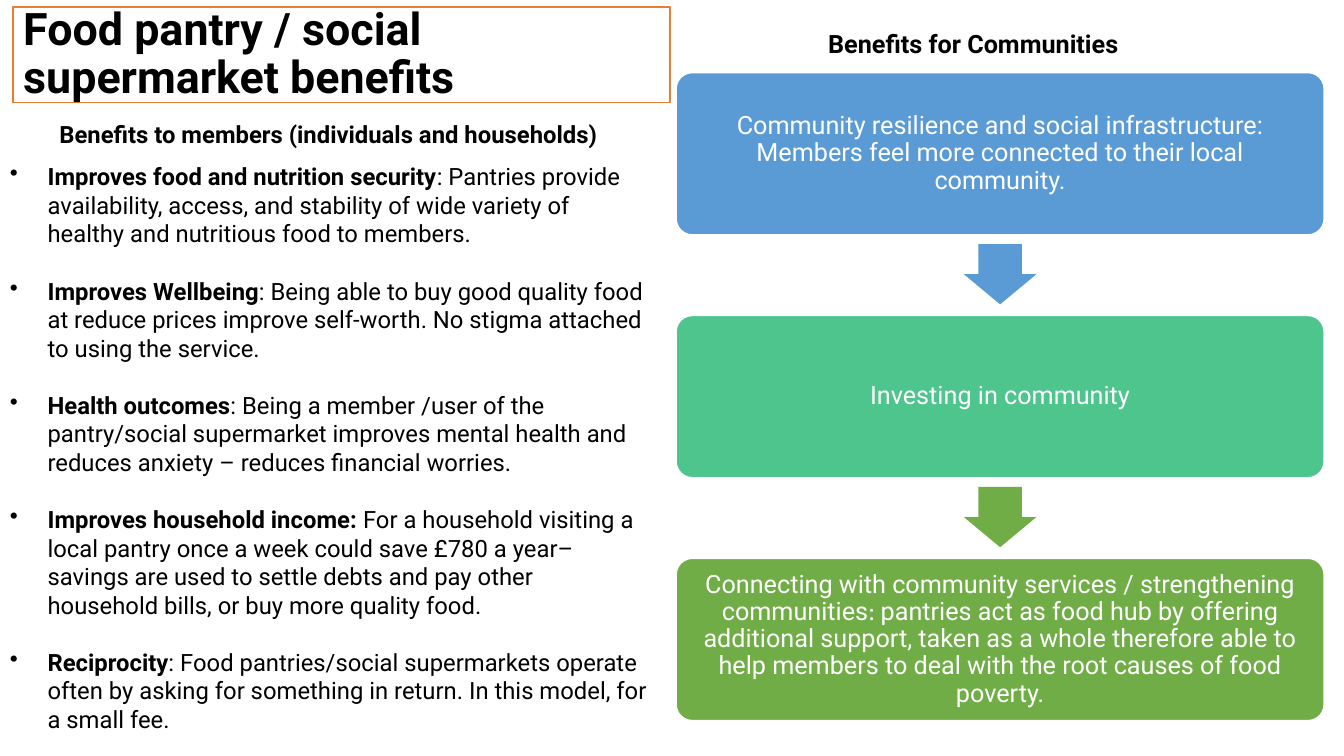
"""Build the slide on the benefits of food pantries and social supermarkets."""
from lxml import etree
from pptx import Presentation
from pptx.dml.color import RGBColor
from pptx.enum import shapes, text
from pptx.oxml import ns
from pptx.util import Cm, Pt

BLACK = RGBColor(0x00, 0x00, 0x00)
WHITE = RGBColor(0xFF, 0xFF, 0xFF)
ORANGE = RGBColor(0xED, 0x7D, 0x31)
BLUE = RGBColor(0x5B, 0x9B, 0xD5)
TEAL = RGBColor(0x4D, 0xC5, 0x8D)
GREEN = RGBColor(0x70, 0xAD, 0x47)

MEMBER_BENEFITS = [
    ("Improves food and nutrition security",
     ": Pantries provide availability, access, and stability of wide variety of "
     "healthy and nutritious food to members."),
    ("Improves Wellbeing",
     ": Being able to buy good quality food at reduce prices improve self-worth. "
     "No stigma attached to using the service."),
    ("Health outcomes",
     ": Being a member /user of the pantry/social supermarket improves mental "
     "health and reduces anxiety – reduces financial worries."),
    ("Improves household income: ",
     "For a household visiting a local pantry once a week could save £780 a year– "
     "savings are used to settle debts and pay other household bills, or buy more "
     "quality food."),
    ("Reciprocity",
     ": Food pantries/social supermarkets operate often by asking for something in "
     "return. In this model, for a small fee."),
]
COMMUNITY_BENEFITS = [
    (BLUE, [("Community resilience and social infrastructure: Members feel more "
             "connected to their local community.", "Roboto")]),
    (TEAL, [("Investing in community", "Roboto")]),
    (GREEN, [("Connecting with community services / strengthening communities", "Roboto"),
             (": ", "Calibri"),
             ("pantries act as food hub by offering additional support, taken as a "
              "whole therefore able to help members to deal with the root causes of "
              "food poverty.", "Roboto")]),
]
ARROW_COLORS = [BLUE, GREEN]
CARD_LEFT, CARD_TOP, CARD_WIDTH, CARD_HEIGHT = 17.04, 1.83, 16.33, 4.09
CARD_PITCH = 6.12
ARROW_WIDTH, ARROW_HEIGHT, ARROW_GAP = 1.83, 1.52, 0.23


def style(paragraph, size, color=BLACK, bold=False, align=text.PP_ALIGN.LEFT):
    paragraph.font.name = "Roboto"
    paragraph.font.size = Pt(size)
    paragraph.font.bold = bold
    paragraph.font.color.rgb = color
    paragraph.alignment = align


def add_heading(left, top, width, height, wording, size, align):
    frame = slide.shapes.add_textbox(Cm(left), Cm(top), Cm(width), Cm(height)).text_frame
    frame.word_wrap = True
    heading = frame.paragraphs[0]
    heading.text = wording
    style(heading, size, bold=True, align=align)
    heading.line_spacing = 1.2
    heading.space_after = Pt(10)
    return frame


presentation = Presentation()
presentation.slide_width, presentation.slide_height = Cm(33.87), Cm(19.05)
slide = presentation.slides.add_slide(presentation.slide_layouts[5])

title = slide.shapes.title
title.left, title.top, title.width, title.height = Cm(0.33), Cm(0.18), Cm(16.56), Cm(2.41)
title.fill.solid()
title.fill.fore_color.rgb = WHITE
title.line.color.rgb = ORANGE
title.line.width = Pt(1)
title.text_frame.text = "Food pantry / social supermarket benefits"
title.text_frame.auto_size = text.MSO_AUTO_SIZE.NONE
title.text_frame.vertical_anchor = text.MSO_ANCHOR.MIDDLE
style(title.text_frame.paragraphs[0], 32, bold=True)
title.text_frame.paragraphs[0].line_spacing = 0.9

members = add_heading(0, 2.74, 16.56, 16.03,
                      "Benefits to members (individuals and households)",
                      17, text.PP_ALIGN.CENTER)
for lead, detail in MEMBER_BENEFITS:
    paragraph = members.add_paragraph()
    style(paragraph, 17)
    paragraph.space_after = Pt(20.4)
    paragraph.add_run().text = lead
    paragraph.runs[0].font.bold = True
    paragraph.add_run().text = detail
    properties = paragraph._p.get_or_add_pPr()
    properties.set("marL", str(Cm(0.95)))
    properties.set("indent", str(-Cm(0.95)))
    bullet = etree.Element(ns.qn("a:buChar"), char="•")
    properties.find(ns.qn("a:defRPr")).addprevious(bullet)

add_heading(20.62, 0.43, 9.42, 1.12, "Benefits for Communities", 18, text.PP_ALIGN.LEFT)

for index, (color, pieces) in enumerate(COMMUNITY_BENEFITS):
    card = slide.shapes.add_shape(
        shapes.MSO_SHAPE.ROUNDED_RECTANGLE, Cm(CARD_LEFT),
        Cm(CARD_TOP + index * CARD_PITCH), Cm(CARD_WIDTH), Cm(CARD_HEIGHT))
    card.adjustments[0] = 0.1
    card.shadow.inherit = False
    card.fill.solid()
    card.fill.fore_color.rgb = color
    card.line.color.rgb = WHITE
    card.line.width = Pt(1)
    frame = card.text_frame
    frame.word_wrap = True
    frame.vertical_anchor = text.MSO_ANCHOR.MIDDLE
    frame.margin_left = frame.margin_right = Cm(0.18)
    frame.margin_top = frame.margin_bottom = Cm(0.18)
    paragraph = frame.paragraphs[0]
    style(paragraph, 18, WHITE, align=text.PP_ALIGN.CENTER)
    paragraph.line_spacing = 0.9
    for wording, font_name in pieces:
        run = paragraph.add_run()
        run.text = wording
        run.font.name = font_name

for index, color in enumerate(ARROW_COLORS):
    arrow = slide.shapes.add_shape(
        shapes.MSO_SHAPE.DOWN_ARROW,
        Cm(CARD_LEFT + (CARD_WIDTH - ARROW_WIDTH) / 2),
        Cm(CARD_TOP + index * CARD_PITCH + CARD_HEIGHT + ARROW_GAP),
        Cm(ARROW_WIDTH), Cm(ARROW_HEIGHT))
    arrow.adjustments[0] = 0.6
    arrow.adjustments[1] = 0.5
    arrow.shadow.inherit = False
    arrow.fill.solid()
    arrow.fill.fore_color.rgb = color
    arrow.line.fill.background()

presentation.save("out.pptx")
